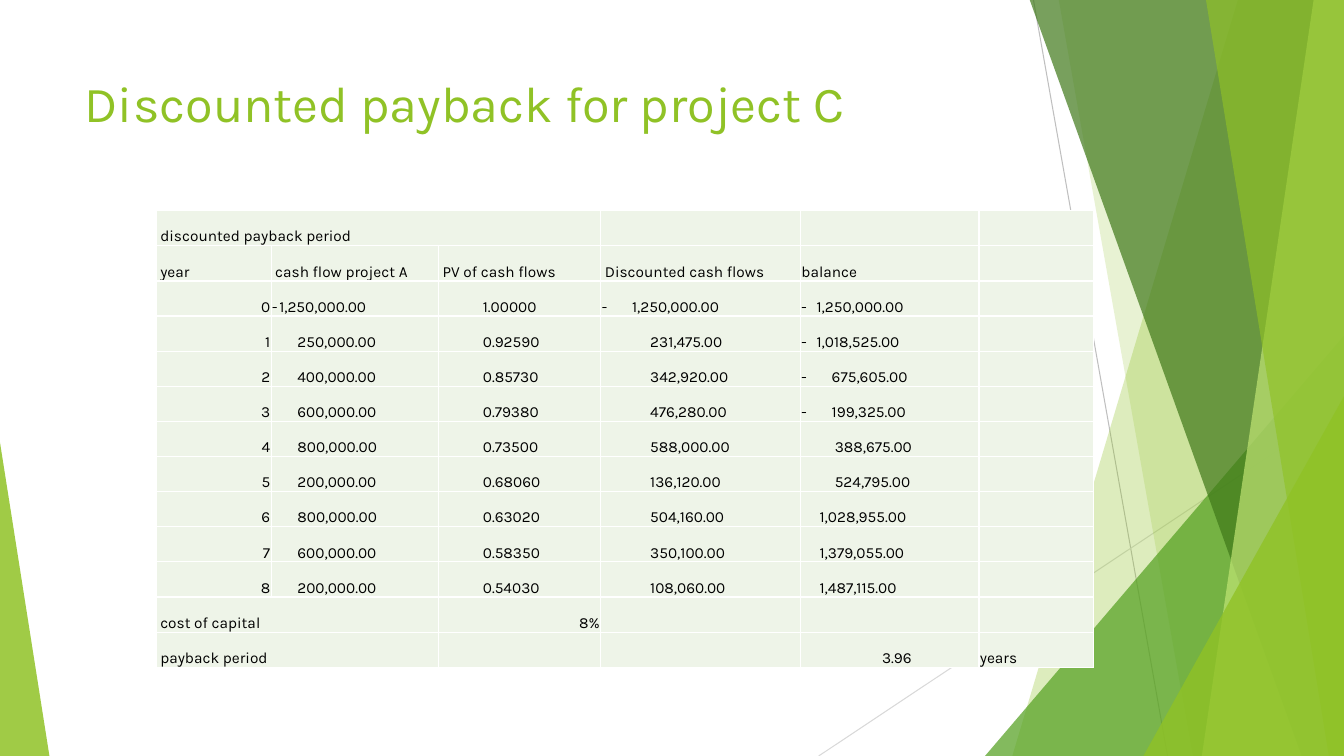
from pptx import Presentation
from pptx.dml.color import RGBColor
from pptx.enum.shapes import MSO_CONNECTOR as Link, MSO_SHAPE as Shape
from pptx.enum.text import MSO_ANCHOR as Anchor, PP_ALIGN as Align
from pptx.oxml.ns import qn
from pptx.util import Inches, Pt
from lxml.etree import SubElement

LIME = RGBColor(0x90, 0xC2, 0x26)
GREEN = RGBColor(0x54, 0xA0, 0x21)
DARK = RGBColor(0x3F, 0x78, 0x19)
PALE = RGBColor(0xC0, 0xE4, 0x74)
MINT = RGBColor(0xEE, 0xF4, 0xE8)
GREY = RGBColor(0xBF, 0xBF, 0xBF)
SILVER = RGBColor(0xD9, 0xD9, 0xD9)
BLACK = RGBColor(0, 0, 0)
WHITE = RGBColor(255, 255, 255)


class Page:
    font = "Karla"

    def __init__(self, deck):
        self.slide = deck.slides.add_slide(deck.slide_layouts[5])
        self.shapes = self.slide.shapes

    def text(self, para, words, size, color):
        run = para.add_run()
        run.text = words
        run.font.name = self.font
        run.font.size = Pt(size)
        run.font.color.rgb = color

    def line(self, x1, y1, x2, y2, color):
        link = self.shapes.add_connector(
            Link.STRAIGHT, Inches(x1), Inches(y1), Inches(x2), Inches(y2))
        link.line.color.rgb = color
        link.line.width = Pt(0.75)
        SubElement(link._element.spPr, qn("a:effectLst"))

    def paint(self, shape, color, alpha):
        shape.shadow.inherit = False
        shape.line.fill.background()
        shape.fill.solid()
        shape.fill.fore_color.rgb = color
        tint = shape._element.spPr.find(qn("a:solidFill"))[0]
        SubElement(tint, qn("a:alpha"), val=str(alpha * 1000))

    def band(self, top, foot, color, alpha):
        """Band from a slanted left edge to the right side of the slide."""
        edge = [(13.33, -0.01), (13.33, 7.5), (foot, 7.5)]
        form = self.shapes.build_freeform(Inches(top), Inches(-0.01))
        form.add_line_segments([(Inches(x), Inches(y)) for x, y in edge])
        self.paint(form.convert_to_shape(), color, alpha)

    def wedge(self, x, y, wide, tip, color, alpha):
        """Triangle that stands on the bottom of the slide."""
        shape = self.shapes.add_shape(
            Shape.ISOSCELES_TRIANGLE, Inches(x), Inches(y), Inches(wide), Inches(7.5 - y))
        shape.adjustments[0] = tip
        self.paint(shape, color, alpha)

    def title(self, words):
        box = self.shapes.title
        box.left, box.top = Inches(0.74), Inches(0.67)
        box.width, box.height = Inches(9.4), Inches(1.44)
        box.text_frame.vertical_anchor = Anchor.TOP
        para = box.text_frame.paragraphs[0]
        para.alignment = Align.LEFT
        self.text(para, words, 36, LIME)
        self.shapes._spTree.append(box._element)

    def table(self, x, y, tall, cols, count):
        frame = self.shapes.add_table(
            count, len(cols), Inches(x), Inches(y), Inches(sum(cols)), Inches(tall))
        self.grid = frame.table
        self.grid.first_row = self.grid.horz_banding = False
        for col, wide in zip(self.grid.columns, cols):
            col.width = Inches(wide)
        for cell in self.grid.iter_cells():
            self.dress(cell)

    def dress(self, cell):
        cell.margin_left = cell.margin_right = cell.margin_top = Inches(0.01)
        cell.margin_bottom = 0
        cell.vertical_anchor = Anchor.BOTTOM
        for side in ("lnL", "lnR", "lnT", "lnB"):
            rule = SubElement(cell._tc.tcPr, qn("a:" + side), w=str(Pt(1)))
            fill = SubElement(rule, qn("a:solidFill"))
            SubElement(fill, qn("a:srgbClr"), val=str(WHITE))
        cell.fill.solid()
        cell.fill.fore_color.rgb = MINT

    def put(self, row, col, words, indent=0, align=Align.LEFT):
        """Fill a cell; a tab in the text leads to the indent."""
        para = self.grid.cell(row, col).text_frame.paragraphs[0]
        para.alignment = align
        props = para._p.get_or_add_pPr()
        if "\t" in words:
            tabs = SubElement(props, qn("a:tabLst"))
            SubElement(tabs, qn("a:tab"), pos=str(Inches(indent)), algn="l")
        else:
            props.set("marL", str(Inches(indent)))
            props.set("indent", "0")
        self.text(para, words, 11, BLACK)

    def money(self, row, col, value, base):
        """Amount with its minus sign at the left edge of the cell."""
        indent = base + 0.15 * (abs(value) < 1e6) + 0.03 * (value > 0)
        sign = "-\t" if value < 0 else ""
        self.put(row, col, f"{sign}{abs(value):,.2f}", indent)

    def label(self, row, words, last):
        self.grid.cell(row, 0).merge(self.grid.cell(row, last))
        self.put(row, 0, words, 0.03)


BANDS = [
    (12.28, 10.04, LIME, 30), (10.5, 11.83, LIME, 20), (10.21, 12.91, DARK, 70),
    (13.03, 11.92, PALE, 70), (11.96, 13.18, LIME, 65),
]
HEADS = ["year", "cash flow project A", "PV of cash flows", "Discounted cash flows", "balance"]
FLOWS = [
    (-1250000, 1.0), (250000, 0.9259), (400000, 0.8573), (600000, 0.7938),
    (800000, 0.735), (200000, 0.6806), (800000, 0.6302), (600000, 0.5835),
    (200000, 0.5403),
]


def main():
    deck = Presentation()
    deck.slide_width, deck.slide_height = Inches(13.33), Inches(7.5)
    page = Page(deck)

    # Backdrop
    page.line(10.25, 0, 11.58, 7.5, GREY)
    page.line(13.33, 4.03, 8.12, 7.5, SILVER)
    for band in BANDS[:2]:
        page.band(*band)
    page.wedge(9.77, 3.33, 3.56, 1, GREEN, 72)
    for band in BANDS[2:]:
        page.band(*band)
    page.wedge(11.34, 3.93, 1.99, 1, LIME, 80)
    page.wedge(0, 4.39, 0.49, 0, LIME, 85)

    # Title
    page.title("Discounted payback for project C")

    # Table heads
    page.table(1.55, 2.09, 4.53, [1.14, 1.66, 1.61, 1.98, 1.77, 1.14], len(FLOWS) + 4)
    page.label(0, "discounted payback period", 2)
    for col, head in enumerate(HEADS):
        page.put(1, col, head, 0 if head == "balance" else 0.03)

    # Yearly flows and running balance
    total = 0
    for year, (cash, rate) in enumerate(FLOWS):
        row = year + 2
        worth = round(cash * rate)
        total += worth
        page.put(row, 0, str(year), align=Align.RIGHT)
        page.money(row, 1, cash, 0.07)
        page.put(row, 2, f"{rate:.5f}", 0.43)
        page.money(row, 3, worth, 0.3)
        page.money(row, 4, total, 0.15)

    # Results
    page.label(11, "cost of capital", 1)
    page.put(11, 2, "8%", align=Align.RIGHT)
    page.label(12, "payback period", 1)
    page.put(12, 4, "3.96", 0.8)
    page.put(12, 5, "years")

    deck.save("out.pptx")


if __name__ == "__main__":
    main()
